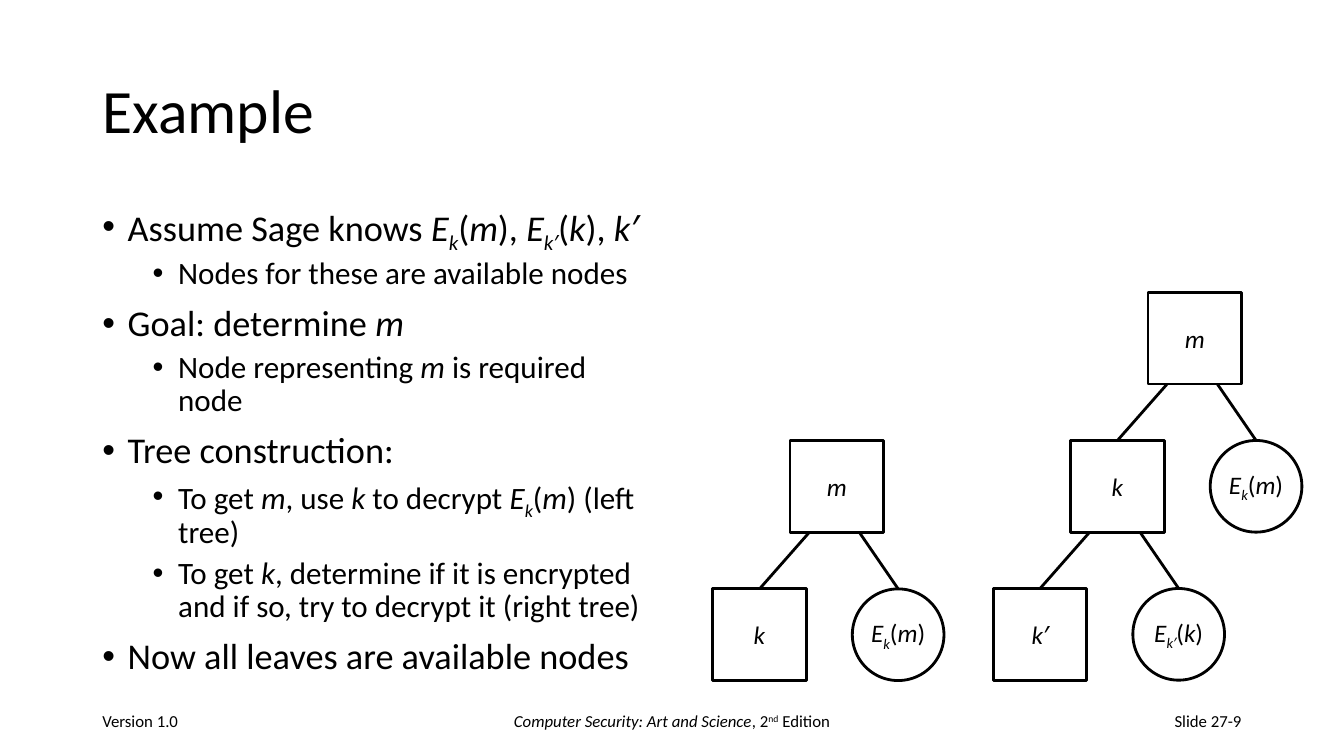
from dataclasses import dataclass

from lxml import etree
from pptx import Presentation
from pptx.dml.color import RGBColor
from pptx.enum.shapes import MSO_CONNECTOR, MSO_SHAPE
from pptx.enum.text import MSO_ANCHOR, PP_ALIGN
from pptx.oxml.ns import qn
from pptx.util import Cm, Pt

LEFT, CENTER, RIGHT = PP_ALIGN.LEFT, PP_ALIGN.CENTER, PP_ALIGN.RIGHT
TOP, MIDDLE = MSO_ANCHOR.TOP, MSO_ANCHOR.MIDDLE
SQUARE, CIRCLE = MSO_SHAPE.RECTANGLE, MSO_SHAPE.OVAL
STRAIGHT = MSO_CONNECTOR.STRAIGHT
TITLE_ONLY = 5
ITALIC_MARK = "*"
BASELINES = {"_": "-25000", "^": "30000"}


@dataclass(frozen=True)
class Theme:
    font: str = "Calibri"
    bullet_font: str = "Arial"
    ink: RGBColor = RGBColor(0, 0, 0)
    title: float = 44
    body: tuple = (25.9, 22.2)
    space_before: tuple = (10, 5)
    indent: tuple = (0.64, 1.91)
    hanging: float = 0.64
    node: float = 18
    footer: float = 12
    line: float = 2


class SlideBuilder:
    node_width, node_height = 2.36, 2.31
    left_offset, right_offset, level_height = -1.95, 1.57, 3.73
    left_link, right_link = 0.48, 1.75

    def __init__(self, presentation, theme):
        self.theme = theme
        self.slide = presentation.slides.add_slide(presentation.slide_layouts[TITLE_ONLY])
        self.shapes = self.slide.shapes

    def set_text(self, paragraph, markup, size, alignment=LEFT):
        paragraph.alignment = alignment
        paragraph.font.name = self.theme.font
        paragraph.font.size = Pt(size)
        paragraph.font.color.rgb = self.theme.ink
        italic, baseline, text = False, None, ""
        for character in markup + ITALIC_MARK:
            if character != ITALIC_MARK and character not in BASELINES:
                text += character
                continue
            if text:
                run = paragraph.add_run()
                run.text = text
                run.font.italic = italic
                if baseline:
                    run._r.get_or_add_rPr().set("baseline", baseline)
                text = ""
            if character == ITALIC_MARK:
                italic = not italic
            else:
                baseline = None if baseline else BASELINES[character]

    def title(self, text, left, top, width, height):
        title = self.shapes.title
        title.left, title.top, title.width, title.height = map(Cm, (left, top, width, height))
        title.text_frame.vertical_anchor = MIDDLE
        paragraph = title.text_frame.paragraphs[0]
        paragraph.line_spacing = 0.9
        self.set_text(paragraph, text, self.theme.title)

    def text_frame(self, left, top, width, height, anchor):
        frame = self.shapes.add_textbox(*map(Cm, (left, top, width, height))).text_frame
        frame.word_wrap = True
        frame.vertical_anchor = anchor
        return frame

    def footer(self, markup, left, width, alignment):
        frame = self.text_frame(left, 17.65, width, 1.01, MIDDLE)
        self.set_text(frame.paragraphs[0], markup, self.theme.footer, alignment)

    def bullets(self, items, left, top, width, height):
        frame = self.text_frame(left, top, width, height, TOP)
        for index, (level, markup) in enumerate(items):
            paragraph = frame.add_paragraph() if index else frame.paragraphs[0]
            paragraph.level = level
            paragraph.line_spacing = 0.9
            paragraph.space_before = Pt(self.theme.space_before[level] if index else 0)
            properties = paragraph._p.get_or_add_pPr()
            properties.set("marL", str(Cm(self.theme.indent[level])))
            properties.set("indent", str(-Cm(self.theme.hanging)))
            etree.SubElement(properties, qn("a:buFont"), typeface=self.theme.bullet_font)
            etree.SubElement(properties, qn("a:buChar"), char="•")
            self.set_text(paragraph, markup, self.theme.body[level])

    def node(self, kind, markup, left, top):
        width = self.node_width if kind == SQUARE else self.node_height
        shape = self.shapes.add_shape(kind, *map(Cm, (left, top, width, self.node_height)))
        shape.shadow.inherit = False
        shape.fill.background()
        shape.line.color.rgb = self.theme.ink
        shape.line.width = Pt(self.theme.line)
        frame = shape.text_frame
        frame.margin_left = frame.margin_right = frame.margin_top = frame.margin_bottom = 0
        frame.word_wrap = False
        frame.vertical_anchor = MIDDLE
        self.set_text(frame.paragraphs[0], markup, self.theme.node, CENTER)
        return shape

    def link(self, parent, offset, child):
        start_left, start_top = parent.left + Cm(offset), parent.top + parent.height
        connector = self.shapes.add_connector(STRAIGHT, start_left, start_top, child.left, child.top)
        connector.end_connect(child, 0)
        connector.line.color.rgb = self.theme.ink
        connector.line.width = Pt(self.theme.line)
        etree.SubElement(connector._element.spPr, qn("a:effectLst"))

    def tree(self, keys, ciphertexts, left, top):
        parent = self.node(SQUARE, keys[0], left, top)
        for key, ciphertext in zip(keys[1:], ciphertexts):
            circle_left = left + self.right_offset
            left += self.left_offset
            top += self.level_height
            square = self.node(SQUARE, key, left, top)
            circle = self.node(CIRCLE, ciphertext, circle_left, top)
            self.link(parent, self.left_link, square)
            self.link(parent, self.right_link, circle)
            parent = square


def main():
    presentation = Presentation()
    presentation.slide_width, presentation.slide_height = Cm(33.87), Cm(19.05)
    builder = SlideBuilder(presentation, Theme())
    builder.title("Example", 2.33, 1.01, 29.21, 3.68)
    builder.bullets([
        (0, "Assume Sage knows *E_k_*(*m*), *E_k′_*(*k*), *k′*"),
        (1, "Nodes for these are available nodes"),
        (0, "Goal: determine *m*"),
        (1, "Node representing *m* is required node"),
        (0, "Tree construction:"),
        (1, "To get *m*, use *k* to decrypt *E_k_*(*m*) (left tree)"),
        (1, "To get *k*, determine if it is encrypted and if so, try to decrypt it (right tree)"),
        (0, "Now all leaves are available nodes"),
    ], 2.33, 5.07, 14.4, 12.09)
    builder.footer("Version 1.0", 2.33, 7.62, LEFT)
    builder.footer("*Computer Security: Art and Science*, 2^nd^ Edition", 11.22, 11.43, CENTER)
    builder.footer("Slide 27-9", 23.92, 7.62, RIGHT)
    builder.tree(["*m*", "*k*"], ["*E_k_*(*m*)"], 19.91, 11.11)
    builder.tree(["*m*", "*k*", "*k′*"], ["*E_k_*(*m*)", "*E_k′_*(*k*)"], 28.93, 7.37)
    presentation.save("out.pptx")


if __name__ == "__main__":
    main()
